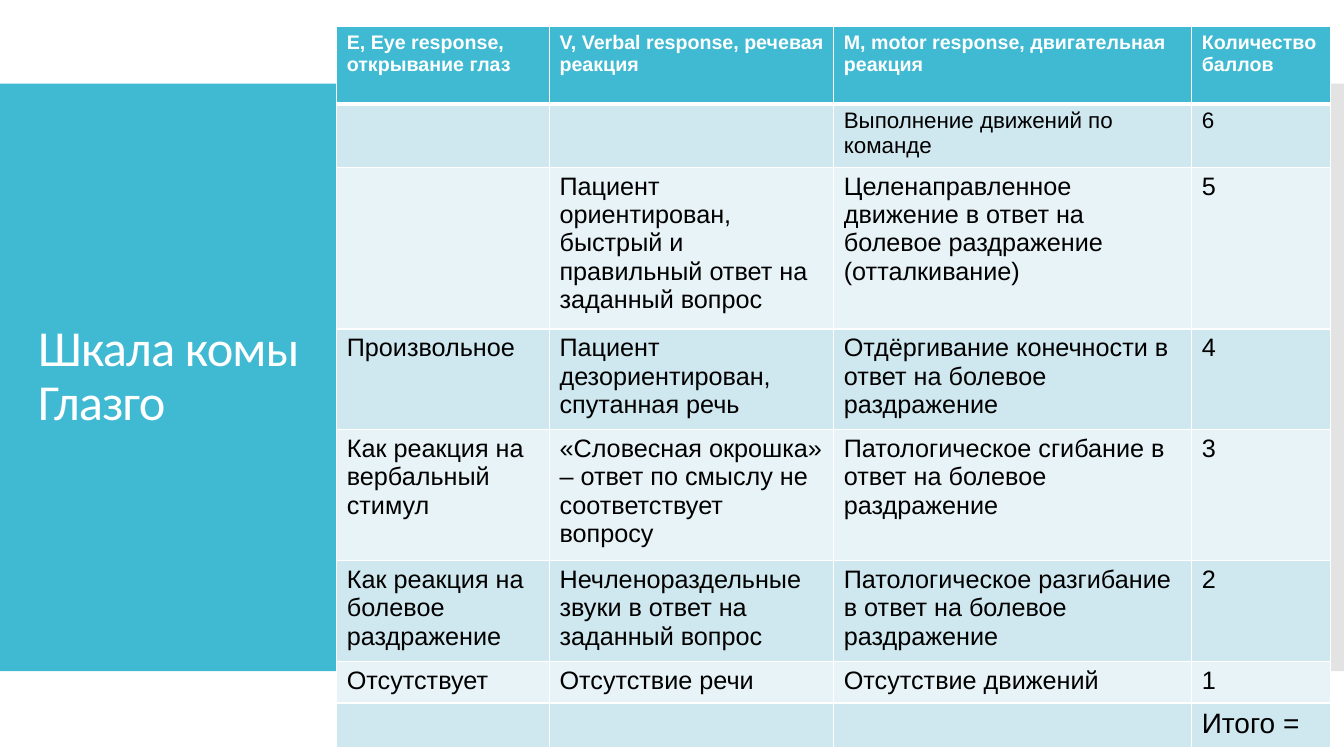
from lxml import etree
from pptx import Presentation
from pptx.dml.color import RGBColor
from pptx.enum.shapes import MSO_SHAPE
from pptx.enum.text import MSO_ANCHOR
from pptx.oxml.ns import qn
from pptx.util import Inches, Pt

RECTANGLE = MSO_SHAPE.RECTANGLE
MIDDLE = MSO_ANCHOR.MIDDLE

TITLE = "Шкала комы Глазго"
TEAL, WHITE, BLACK, GREY = "40BAD2", "FFFFFF", "000000", "C8C8C8"
BANDS = ["CFE7EE", "E8F3F7"]
COLUMN_WIDTHS = [2.11, 2.82, 3.55, 1.38]
# Row height, text size, cell texts
ROWS = [
    (0.77, 14, ["E, Eye response, открывание глаз", "V, Verbal response, речевая реакция",
                "M, motor response, двигательная реакция", "Количество баллов"]),
    (0.6, 16, ["", "", "Выполнение движений по команде", "6"]),
    (1.5, 18, ["", "Пациент ориентирован, быстрый и правильный ответ на заданный вопрос",
               "Целенаправленное движение в ответ на болевое раздражение (отталкивание)", "5"]),
    (0.94, 18, ["Произвольное", "Пациент дезориентирован, спутанная речь",
                "Отдёргивание конечности в ответ на болевое раздражение", "4"]),
    (1.22, 18, ["Как реакция на вербальный стимул",
                "«Словесная окрошка» – ответ по смыслу не соответствует вопросу",
                "Патологическое сгибание в ответ на болевое раздражение", "3"]),
    (0.94, 18, ["Как реакция на болевое раздражение",
                "Нечленораздельные звуки в ответ на заданный вопрос",
                "Патологическое разгибание в ответ на болевое раздражение", "2"]),
    (0.41, 18, ["Отсутствует", "Отсутствие речи", "Отсутствие движений", "1"]),
    (0.44, 20, ["", "", "", "Итого ="]),
]


def paint(fill, color):
    fill.solid()
    fill.fore_color.rgb = RGBColor.from_string(color)


def style(para, font_name, size, color, bold=False):
    para.font.name = font_name
    para.font.size = Pt(size)
    para.font.bold = bold
    para.font.color.rgb = RGBColor.from_string(color)


def add_panel(page, left, width, color):
    panel = page.shapes.add_shape(RECTANGLE, Inches(left), Inches(0.83),
                                  Inches(width), Inches(5.83))
    panel.shadow.inherit = False
    panel.line.fill.background()
    paint(panel.fill, color)
    return panel


def add_borders(cell, widths):
    """Draw white cell borders; widths maps a side letter to points."""
    properties = cell._tc.get_or_add_tcPr()
    for position, side in enumerate("LRTB"):
        line = etree.Element(qn(f"a:ln{side}"), w=str(Pt(widths[side])))
        fill = etree.SubElement(line, qn("a:solidFill"))
        etree.SubElement(fill, qn("a:srgbClr"), val=WHITE)
        properties.insert(position, line)


def add_title(page):
    box = page.shapes.add_textbox(Inches(0.28), Inches(1.23), Inches(3.22), Inches(5.03))
    frame = box.text_frame
    frame.word_wrap = True
    frame.vertical_anchor = MIDDLE
    para = frame.paragraphs[0]
    para.line_spacing = 0.9
    span = para.add_run()
    span.text = TITLE
    span._r.get_or_add_rPr().set("spc", "-60")
    style(para, "Calibri", 36, WHITE)


def add_scale(page):
    height = sum(row[0] for row in ROWS)
    table = page.shapes.add_table(len(ROWS), len(COLUMN_WIDTHS), Inches(3.34), Inches(0.26),
                                  Inches(sum(COLUMN_WIDTHS)), Inches(height)).table
    for column, width in zip(table.columns, COLUMN_WIDTHS):
        column.width = Inches(width)
    for index, (height, size, texts) in enumerate(ROWS):
        header = index == 0
        table.rows[index].height = Inches(height)
        borders = {"L": 1, "R": 1, "T": 3 if index == 1 else 1, "B": 3 if header else 1}
        for column, text in enumerate(texts):
            cell = table.cell(index, column)
            cell.text = text
            style(cell.text_frame.paragraphs[0], "Arial", size,
                  WHITE if header else BLACK, header)
            paint(cell.fill, TEAL if header else BANDS[(index - 1) % 2])
            add_borders(cell, borders)


def main():
    deck = Presentation()
    deck.slide_width, deck.slide_height = Inches(13.33), Inches(7.5)
    page = deck.slides.add_slide(deck.slide_layouts[6])
    paint(page.background.fill, WHITE)
    add_panel(page, 0, 3.77, TEAL)
    edge = add_panel(page, 12.92, 0.41, GREY)
    tint = edge._element.spPr.find(".//" + qn("a:srgbClr"))
    etree.SubElement(tint, qn("a:alpha"), val="50000")
    add_title(page)
    add_scale(page)
    deck.save("out.pptx")


if __name__ == "__main__":
    main()
